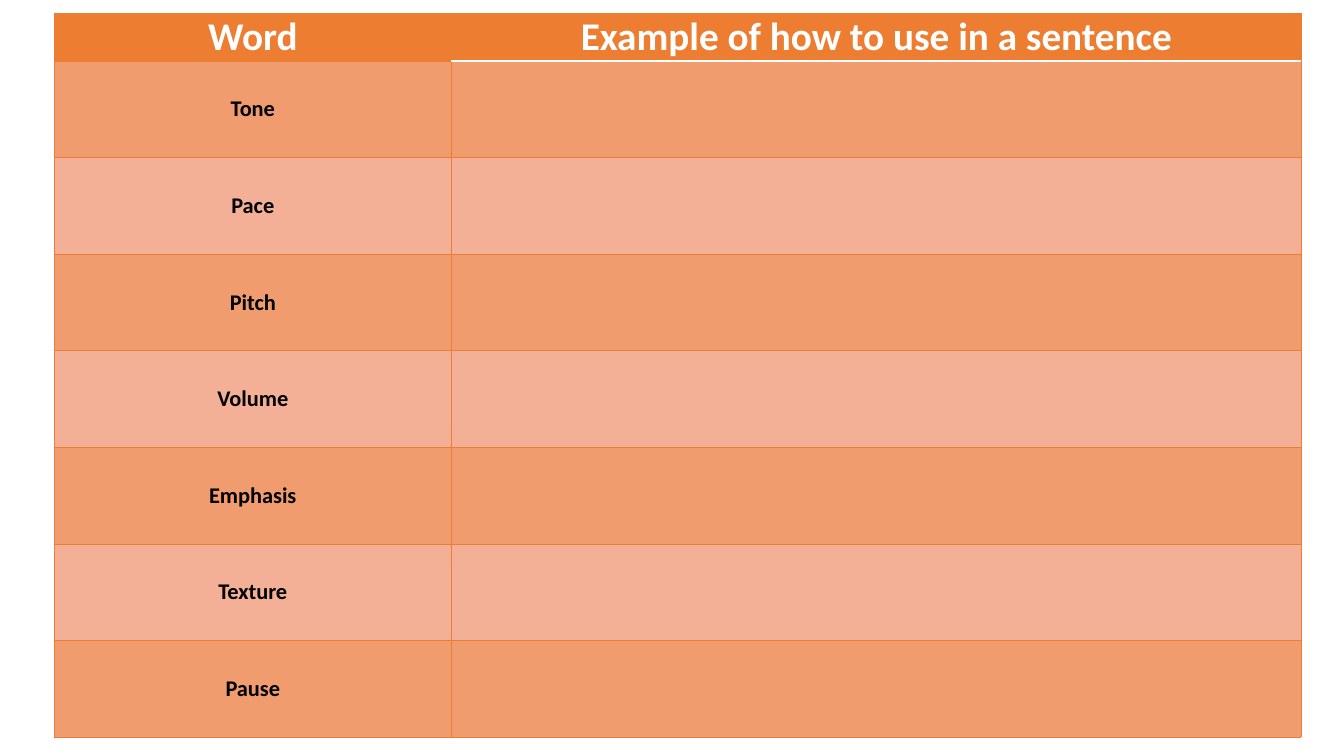
from pptx import Presentation
from pptx.dml.color import RGBColor
from pptx.enum import text
from pptx.oxml import parse_xml
from pptx.oxml.ns import nsdecls
from pptx.util import Pt

ORANGE, DARK, LIGHT = "ED7D31", "F19C6E", "F4B096"
WHITE, BLACK = "FFFFFF", "000000"
HEADS = ["Word", "Example of how to use in a sentence"]
WORDS = ["Tone", "Pace", "Pitch", "Volume", "Emphasis", "Texture", "Pause"]
HEAD_H = 34.2


def rgb(tone):
    return RGBColor.from_string(tone)


def edge(cell, side, tone, width):
    """Draw one cell border; side is L, R, T or B, called in that order."""
    line = parse_xml(
        f'<a:ln{side} {nsdecls("a")} w="{Pt(width)}"><a:solidFill>'
        f'<a:srgbClr val="{tone}"/></a:solidFill></a:ln{side}>')
    cell._tc.get_or_add_tcPr().insert("LRTB".index(side), line)


def style(cell, fill, tops):
    """Fill and border a cell; tops maps a side to its own colour and width."""
    cell.fill.solid()
    cell.fill.fore_color.rgb = rgb(fill)
    cell.margin_left = cell.margin_right = Pt(5)
    cell.margin_top = cell.margin_bottom = 0
    cell.vertical_anchor = text.MSO_ANCHOR.MIDDLE
    for side in "LRTB":
        edge(cell, side, *tops.get(side, (ORANGE, 0.5)))


def write(cell, words, size, tone):
    para = cell.text_frame.paragraphs[0]
    para.alignment = text.PP_ALIGN.CENTER
    run = para.add_run()
    run.text = words
    font = run.font
    font.name, font.size, font.bold = "Calibri", Pt(size), True
    font.color.rgb = rgb(tone)


def word_table(slide, left, top, width, height):
    frame = slide.shapes.add_table(
        len(WORDS) + 1, len(HEADS), Pt(left), Pt(top), Pt(width), Pt(height))
    table = frame.table
    first = 283.6
    table.columns[0].width = Pt(first)
    table.columns[1].width = Pt(width - first)
    table.rows[0].height = Pt(HEAD_H)
    rule = (WHITE, 1)

    for col, head in enumerate(HEADS):
        cell = table.cell(0, col)
        style(cell, ORANGE, {"B": rule} if col else {})
        write(cell, head, 28, WHITE)

    for row, word in enumerate(WORDS, 1):
        table.rows[row].height = Pt((height - HEAD_H) / len(WORDS))
        band = DARK if row % 2 else LIGHT
        style(table.cell(row, 0), band, {})
        style(table.cell(row, 1), band, {"T": rule} if row == 1 else {})
        write(table.cell(row, 0), word, 16, BLACK)


def main():
    deck = Presentation()
    deck.slide_width, deck.slide_height = Pt(960), Pt(540)
    slide = deck.slides.add_slide(deck.slide_layouts[6])
    word_table(slide, 38.8, 9.3, 890.6, 517.2)
    deck.save("out.pptx")


if __name__ == "__main__":
    main()
